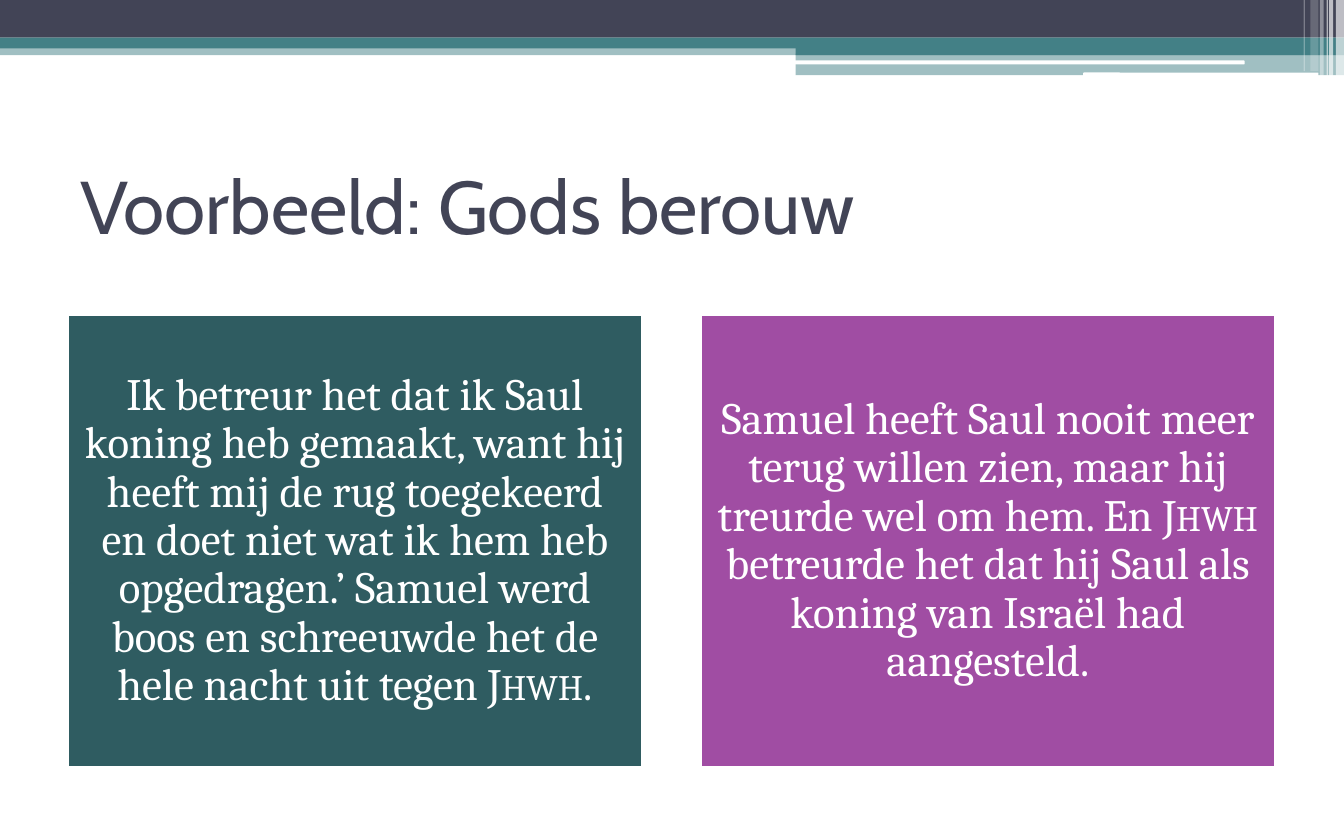
from lxml import etree
from pptx import Presentation
from pptx.dml.color import RGBColor
from pptx.enum import shapes, text
from pptx.oxml import ns
from pptx.util import Inches, Pt

HUES = {
    "dark": "424456",
    "teal": "438086",
    "deep": "2F5C61",
    "plum": "A04DA3",
    "white": "FFFFFF",
}
RECT = shapes.MSO_SHAPE.RECTANGLE
ROUND = shapes.MSO_SHAPE.ROUNDED_RECTANGLE


def color(name):
    return RGBColor.from_string(HUES[name])


def add_bar(slide, box, hue, alpha=100, kind=RECT):
    bar = slide.shapes.add_shape(kind, *map(Inches, box))
    bar.shadow.inherit = False
    bar.fill.solid()
    bar.fill.fore_color.rgb = color(hue)
    bar.line.fill.background()
    if alpha < 100:
        fill = bar._element.spPr.find(ns.qn("a:solidFill"))
        etree.SubElement(fill[0], ns.qn("a:alpha"), val=str(alpha * 1000))
    return bar


def add_band(slide, box):
    left, top, width, height = box
    split = left + 5.92
    rest = width - 5.92
    add_bar(slide, (left, top + 0.33, width, 0.08), "teal", 50)
    add_bar(slide, (left, top, width, 0.28), "dark")
    add_bar(slide, (left, top + 0.28, width, 0.08), "teal")
    add_bar(slide, (split, top + 0.33, rest, 0.08), "teal")
    add_bar(slide, (split, top + 0.4, rest, 0.16), "teal", 50)
    for start, y, span in ((5.91, 0.45, 3.35), (8.06, 0.54, 1.75)):
        add_bar(slide, (left + start, top + y, span, 0.03), "white", kind=ROUND)
    stripes = (
        (0.06, 0.06, height, 65),
        (0.11, 0.03, height, 65),
        (0.13, 0.01, height, 60),
        (0.18, 0.03, height, 40),
        (0.25, 0.06, height - 0.04, 20),
        (0.3, 0.01, height - 0.04, 30),
    )
    for inset, thick, tall, alpha in stripes:
        add_bar(slide, (left + width - inset, top, thick, tall), "white", alpha)


def style_run(run, face, size, hue):
    run.font.name = face
    run.font.size = Pt(size)
    run.font.color.rgb = color(hue)


def add_title(slide, box, words):
    frame = slide.shapes.add_textbox(*map(Inches, box)).text_frame
    frame.word_wrap = True
    frame.vertical_anchor = text.MSO_ANCHOR.MIDDLE
    frame.text = words
    style_run(frame.paragraphs[0].runs[0], "Cabin", 40, "dark")


def add_card(slide, box, hue, parts):
    card = add_bar(slide, box, hue)
    card.line.color.rgb = color("white")
    card.line.width = Pt(1.5)
    frame = card.text_frame
    frame.word_wrap = True
    frame.vertical_anchor = text.MSO_ANCHOR.MIDDLE
    frame.margin_left = frame.margin_right = Inches(0.1)
    frame.margin_top = frame.margin_bottom = Inches(0.1)
    para = frame.paragraphs[0]
    para.alignment = text.PP_ALIGN.CENTER
    para.line_spacing = 0.9
    for part in parts:
        run = para.add_run()
        run.text = part
        style_run(run, "Cambria", 24, "white")
        if part == "Jhwh":
            run._r.get_or_add_rPr().set("cap", "small")


def add_cards(slide, box, cards):
    left, top, width, height = box
    gap = 0.43
    wide = (width - gap * (len(cards) - 1)) / len(cards)
    for spot, (hue, parts) in enumerate(cards):
        place = (left + spot * (wide + gap), top, wide, height)
        add_card(slide, place, hue, parts)


def main():
    deck = Presentation()
    deck.slide_width = Inches(10)
    deck.slide_height = Inches(6.25)
    slide = deck.slides.add_slide(deck.slide_layouts[6])
    cards = (
        ("deep", (
            "Ik betreur het dat ik Saul koning heb gemaakt, want hij heeft mij "
            "de rug toegekeerd en doet niet wat ik hem heb opgedragen.’ Samuel "
            "werd boos en schreeuwde het de hele nacht uit tegen ",
            "Jhwh",
            ".",
        )),
        ("plum", (
            "Samuel heeft Saul nooit meer terug willen zien, maar hij treurde "
            "wel om hem. En ",
            "Jhwh",
            " betreurde het dat hij Saul als koning van Israël had aangesteld.",
        )),
    )
    add_band(slide, (0, 0, 10, 0.57))
    add_title(slide, (0.5, 1.04, 9, 0.97), "Voorbeeld: Gods berouw")
    add_cards(slide, (0.5, 2.34, 8.99, 3.37), cards)
    deck.save("out.pptx")


if __name__ == "__main__":
    main()
